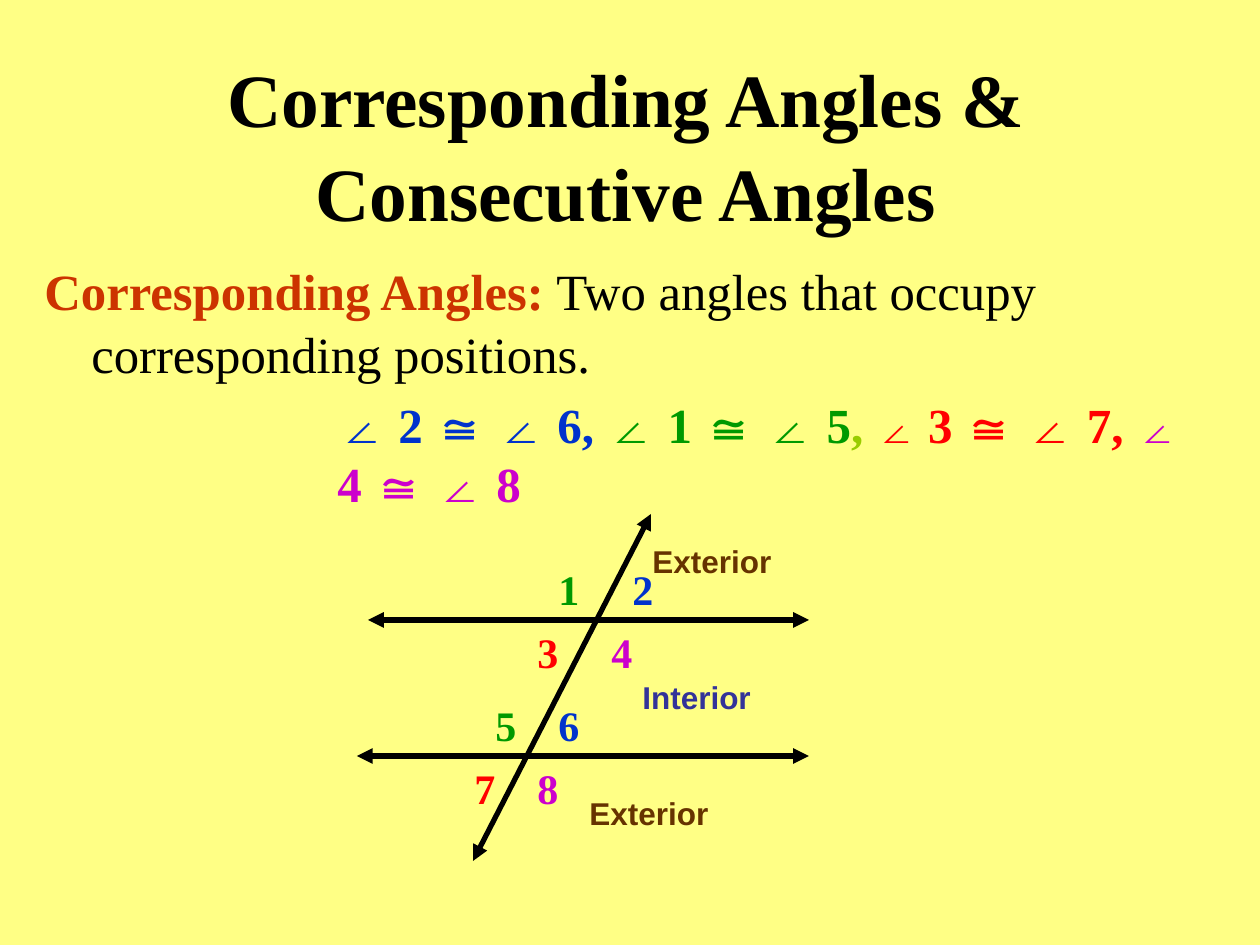
import dataclasses

import pptx
import pptx.dml.color
import pptx.enum.shapes
import pptx.enum.text
import pptx.oxml.xmlchemy
import pptx.util

PX = pptx.util.Inches(1) / 126


@dataclasses.dataclass(frozen=True)
class Theme:
    serif: str = "Times New Roman"
    sans: str = "Arial"
    background: str = "FFFF85"
    black: str = "000000"
    term: str = "CC3300"
    blue: str = "0033CC"
    green: str = "009900"
    lime: str = "99CC00"
    red: str = "FF0000"
    purple: str = "CC00CC"
    interior: str = "333399"
    exterior: str = "663300"
    title_size: int = 43
    body_size: int = 29
    formula_size: int = 28
    number_size: int = 24
    region_size: int = 18
    line_width: int = 3


THEME = Theme()


def px(*lengths):
    return [round(length * PX) for length in lengths]


def rgb(colour):
    return pptx.dml.color.RGBColor.from_string(colour)


def style_font(font, size, colour, name=THEME.serif, bold=True):
    font.name = name
    font.size = pptx.util.Pt(size)
    font.bold = bold
    font.color.rgb = rgb(colour)


def add_title(page, text, bounds):
    title = page.shapes.title
    title.left, title.top, title.width, title.height = px(*bounds)
    frame = title.text_frame
    frame.text = text
    frame.word_wrap = True
    frame.auto_size = pptx.enum.text.MSO_AUTO_SIZE.NONE
    frame.vertical_anchor = pptx.enum.text.MSO_ANCHOR.MIDDLE
    para = frame.paragraphs[0]
    para.alignment = pptx.enum.text.PP_ALIGN.CENTER
    para.line_spacing = 1.04
    style_font(para.font, THEME.title_size, THEME.black)


def add_text(page, bounds, grow=True):
    """Add an empty wrapping text box and return its first paragraph."""
    frame = page.shapes.add_textbox(*px(*bounds)).text_frame
    frame.word_wrap = True
    if grow:
        frame.auto_size = pptx.enum.text.MSO_AUTO_SIZE.SHAPE_TO_FIT_TEXT
    return frame.paragraphs[0]


def add_span(para, text, size, colour, bold=True):
    span = para.add_run()
    span.text = text
    style_font(span.font, size, colour, bold=bold)


def add_definition(page):
    para = add_text(page, (32, 252, 1197, 577), grow=False)
    para.space_before = pptx.util.Pt(4)
    para.line_spacing = 1.03
    indent = px(47)[0]
    properties = para._p.get_or_add_pPr()
    properties.set("marL", str(indent))
    properties.set("indent", str(-indent))
    add_span(para, "Corresponding Angles:", THEME.body_size, THEME.term)
    add_span(para, " Two angles that occupy corresponding positions.",
             THEME.body_size, THEME.black, bold=False)


def add_congruences(page):
    para = add_text(page, (325, 388, 892, 72))
    large, small = THEME.formula_size, THEME.number_size
    for text, size, colour in (
        ("∠ 2 ≅ ∠ 6, ", large, THEME.blue),
        ("∠ 1 ≅ ∠ 5", large, THEME.green),
        (", ", large, THEME.lime),
        ("∠ ", small, THEME.red),
        ("3 ≅ ∠ 7, ", large, THEME.red),
        ("∠ ", small, THEME.purple),
        ("4 ≅ ∠ 8", large, THEME.purple),
    ):
        add_span(para, text, size, colour)


def add_arrow_line(page, start, end):
    """Draw a straight line with an arrowhead at both ends."""
    arrow = page.shapes.add_connector(
        pptx.enum.shapes.MSO_CONNECTOR.STRAIGHT, *px(*start, *end))
    arrow.line.color.rgb = rgb(THEME.black)
    arrow.line.width = pptx.util.Pt(THEME.line_width)
    outline = arrow.line._get_or_add_ln()
    new_element = pptx.oxml.xmlchemy.OxmlElement
    for tag in ("a:headEnd", "a:tailEnd"):
        arrowhead = new_element(tag)
        arrowhead.set("type", "triangle")
        outline.append(arrowhead)
    arrow._element.spPr.append(new_element("a:effectLst"))


def add_label(page, text, bounds, size, colour, name=THEME.serif):
    para = add_text(page, bounds)
    para.text = text
    para.space_before = pptx.util.Pt(2)
    style_font(para.font, size, colour, name)


def add_angle_numbers(page):
    """Number the angles; corresponding angles share a colour."""
    colours = (THEME.green, THEME.blue, THEME.red, THEME.purple)
    places = ((546, 557, 53), (620, 557, 53), (525, 620, 53), (599, 620, 42),
              (483, 693, 53), (546, 693, 53), (462, 756, 42), (525, 756, 32))
    for index, (left, top, width) in enumerate(places):
        add_label(page, str(index + 1), (left, top, width, 63),
                  THEME.number_size, colours[index % len(colours)])


def add_region_names(page):
    for text, left, top, width, colour in (
        ("Interior", 630, 672, 252, THEME.interior),
        ("Exterior", 577, 788, 199, THEME.exterior),
        ("Exterior", 640, 536, 199, THEME.exterior),
    ):
        add_label(page, text, (left, top, width, 50),
                  THEME.region_size, colour, THEME.sans)


def main():
    deck = pptx.Presentation()
    deck.slide_width, deck.slide_height = px(1260, 945)
    page = deck.slides.add_slide(deck.slide_layouts[5])
    page.background.fill.solid()
    page.background.fill.fore_color.rgb = rgb(THEME.background)

    add_title(page, "Corresponding Angles & Consecutive Angles",
              (32, 95, 1187, 95))
    add_definition(page)
    add_congruences(page)
    for start, end in (((368, 620), (809, 620)),
                       ((357, 756), (809, 756)),
                       ((651, 514), (473, 861))):
        add_arrow_line(page, start, end)
    add_angle_numbers(page)
    add_region_names(page)
    deck.save("out.pptx")


if __name__ == "__main__":
    main()
